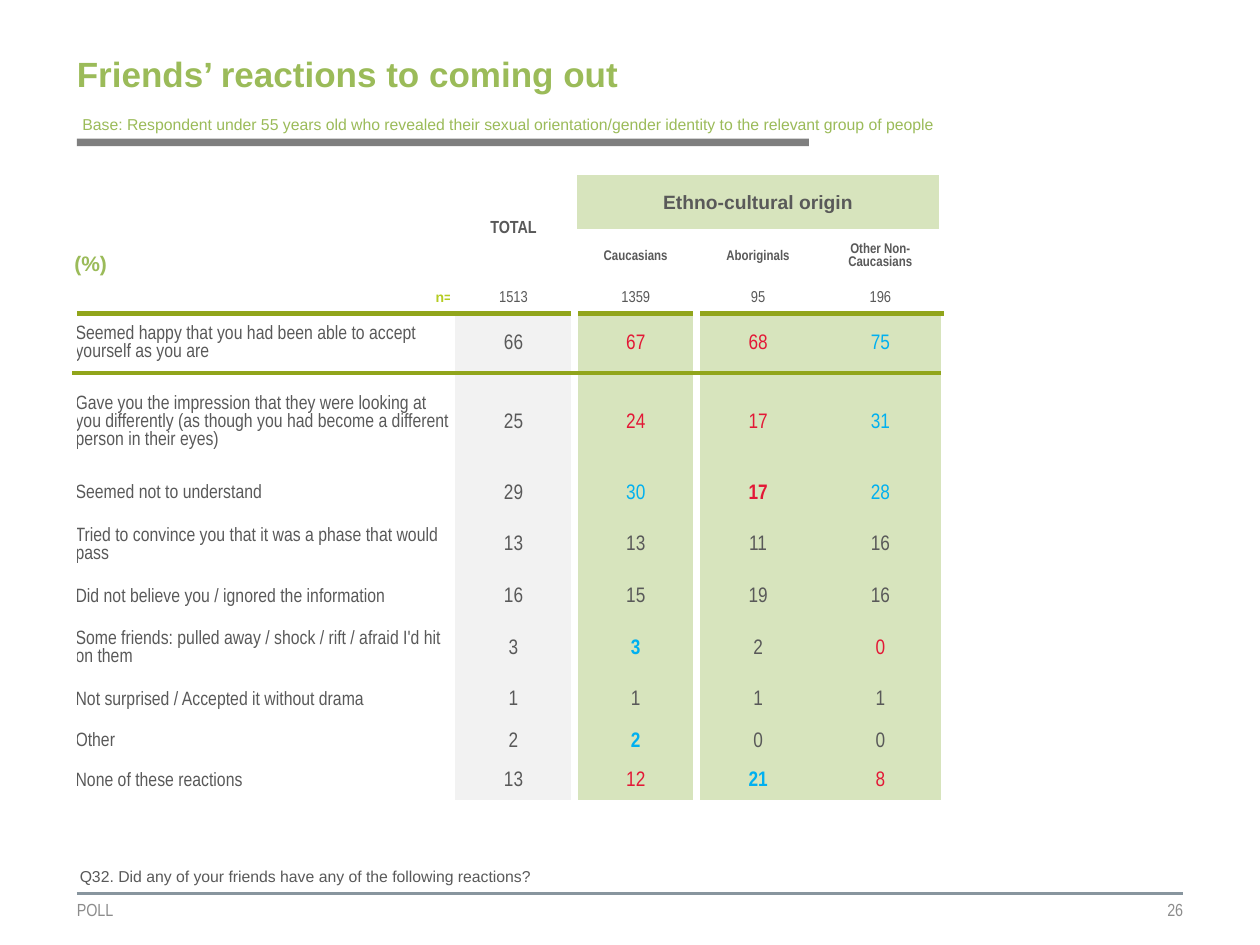
"""Build the slide on friends' reactions to coming out."""
from lxml.etree import SubElement
from pptx import Presentation
from pptx.dml.color import RGBColor
from pptx.enum.shapes import MSO_CONNECTOR, MSO_SHAPE
from pptx.enum.text import MSO_ANCHOR, PP_ALIGN
from pptx.oxml import parse_xml
from pptx.oxml.ns import nsdecls, qn
from pptx.util import Pt

GREEN = RGBColor(0x9B, 0xBB, 0x59)
LIME = RGBColor(0xB5, 0xCC, 0x22)
OLIVE = RGBColor(0x91, 0xA5, 0x1B)
PALE = RGBColor(0xD7, 0xE4, 0xBD)
MIST = RGBColor(0xF2, 0xF2, 0xF2)
WHITE = RGBColor(0xFF, 0xFF, 0xFF)
DARK = RGBColor(0x59, 0x59, 0x59)
GREY = RGBColor(0x8C, 0x8C, 0x8C)
BAR = RGBColor(0x7F, 0x7F, 0x7F)
STEEL = RGBColor(0x88, 0x95, 0x9E)
RED = RGBColor(0xE3, 0x18, 0x36)
BLUE = RGBColor(0x00, 0xB0, 0xF0)

SANS, SLIM = "Arial", "Arial Narrow"
NO_GRID = "{2D5ABB26-0587-4C30-8999-92F81FD0307C}"
LEFT, RIGHT = 43.9, 676.1
TITLE = "Friends’ reactions to coming out"
BASE = ("Base: Respondent under 55 years old who revealed their sexual "
        "orientation/gender identity to the relevant group of people")
ASK = "Q32. Did any of your friends have any of the following reactions?"
GROUPS = ["Caucasians", "Aboriginals", "Other Non-Caucasians"]
COUNTS = [1513, 1359, 95, 196]
TONES = {"-": (DARK, False), "r": (RED, False), "b": (BLUE, False),
         "R": (RED, True), "B": (BLUE, True)}
ROWS = [
    ("Seemed happy that you had been able to accept yourself as you are",
     (66, 67, 68, 75), "-rrb", 33.8),
    ("Gave you the impression that they were looking at you differently "
     "(as though you had become a different person in their eyes)",
     (25, 24, 17, 31), "-rrb", 56.2),
    ("Seemed not to understand", (29, 30, 17, 28), "-bRb", 25.2),
    ("Tried to convince you that it was a phase that would pass",
     (13, 13, 11, 16), "----", 33.8),
    ("Did not believe you / ignored the information",
     (16, 15, 19, 16), "----", 25.2),
    ("Some friends: pulled away / shock / rift / afraid I'd hit on them",
     (3, 3, 2, 0), "-B-r", 33.8),
    ("Not surprised / Accepted it without drama",
     (1, 1, 1, 1), "----", 25.2),
    ("Other", (2, 2, 0, 0), "-B--", 22.4),
    ("None of these reactions", (13, 12, 21, 8), "-rBr", 22.4),
]
HEADS = [31, 30.2, 18]
COLS = [216] + [69.9] * 4


def style(para, size, face, color, bold=False, align=PP_ALIGN.LEFT):
    para.alignment = align
    font = para.font
    font.size, font.name, font.bold = Pt(size), face, bold
    font.color.rgb = color


def put_text(slide, text, box, look, pad=None, wrap=True):
    frame = slide.shapes.add_textbox(*map(Pt, box)).text_frame
    frame.word_wrap = wrap
    if pad is not None:
        frame.margin_left = frame.margin_right = Pt(pad)
        frame.margin_top = frame.margin_bottom = Pt(pad)
        frame.vertical_anchor = MSO_ANCHOR.MIDDLE
    frame.text = text
    style(frame.paragraphs[0], *look)


def put_cell(cell, text, look, pads=(0.7, 0.7, 0.7, 0)):
    (cell.margin_left, cell.margin_top,
     cell.margin_right, cell.margin_bottom) = map(Pt, pads)
    cell.vertical_anchor = MSO_ANCHOR.MIDDLE
    cell.text = str(text)
    style(cell.text_frame.paragraphs[0], *look)


def put_edges(cell, edges):
    props = cell._tc.get_or_add_tcPr()
    for spot, side in enumerate(s for s in "LRTB" if s in edges):
        color, width = edges[side]
        line = parse_xml(f'<a:ln{side} {nsdecls("a")} w="{Pt(width)}"/>')
        solid = SubElement(line, qn("a:solidFill"))
        SubElement(solid, qn("a:srgbClr"), val=str(color))
        props.insert(spot, line)


def find_edges(row, col):
    edges = {}
    if row < 3 or col < 2:
        edges["R"] = (WHITE, 4.5 if row > 2 and col == 1 else 3)
        if col or row > 2:
            edges["L"] = (WHITE, 3)
    elif col == 2:
        edges["L"] = (WHITE, 4.5)
    if row == 2:
        edges["B"] = (OLIVE, 3)
    if row == 3:
        edges["T"] = (OLIVE, 3)
    return edges


def put_table(slide):
    highs = HEADS + [row[3] for row in ROWS]
    frame = slide.shapes.add_table(len(highs), len(COLS), Pt(42.5), Pt(100.1),
                                   Pt(sum(COLS)), Pt(sum(highs)))
    table = frame.table
    table.first_row = table.horz_banding = False
    table._tbl.tblPr.find(qn("a:tableStyleId")).text = NO_GRID
    for col, width in zip(table.columns, COLS):
        col.width = Pt(width)
    for row, high in zip(table.rows, highs):
        row.height = Pt(high)

    mid = PP_ALIGN.CENTER
    table.cell(0, 1).merge(table.cell(1, 1))
    table.cell(0, 2).merge(table.cell(0, 4))
    put_cell(table.cell(0, 1), "TOTAL", (10, SLIM, DARK, True, mid))
    put_cell(table.cell(0, 2), "Ethno-cultural origin",
             (11, SANS, DARK, True, mid))
    unit, size = table.cell(1, 0), table.cell(2, 0)
    put_cell(unit, "(%)", (12, SANS, GREEN, True), (0, 3.6, 0, 3.6))
    unit.vertical_anchor = MSO_ANCHOR.BOTTOM
    put_cell(size, "n=", (8, SANS, LIME, True, PP_ALIGN.RIGHT),
             (0, 3.6, 0, 3.6))
    for cell in (unit, size):
        cell.text_frame.paragraphs[0].line_spacing = 0.95
    for col, name in enumerate(GROUPS, 2):
        put_cell(table.cell(1, col), name, (8, SLIM, DARK, True, mid))
    for col, count in enumerate(COUNTS, 1):
        put_cell(table.cell(2, col), count, (9, SLIM, DARK, False, mid))

    for row, (label, values, tones, _) in enumerate(ROWS, len(HEADS)):
        put_cell(table.cell(row, 0), label, (11, SLIM, DARK))
        for col, (value, tone) in enumerate(zip(values, tones), 1):
            put_cell(table.cell(row, col), value,
                     (12, SLIM, *TONES[tone], mid))

    for row in range(len(highs)):
        for col in range(len(COLS)):
            cell = table.cell(row, col)
            if col > 1 and row not in (1, 2):
                cell.fill.solid()
                cell.fill.fore_color.rgb = PALE
            elif col == 1 and row > 2:
                cell.fill.solid()
                cell.fill.fore_color.rgb = MIST
            else:
                cell.fill.background()
            put_edges(cell, find_edges(row, col))


def put_frame(slide):
    rule = slide.shapes.add_connector(MSO_CONNECTOR.STRAIGHT, Pt(LEFT),
                                      Pt(510.5), Pt(RIGHT), Pt(510.5))
    rule.line.color.rgb, rule.line.width = STEEL, Pt(1.5)
    SubElement(rule._element.spPr, qn("a:effectLst"))
    bar = slide.shapes.add_shape(MSO_SHAPE.RECTANGLE, Pt(LEFT), Pt(79.2),
                                 Pt(418.3), Pt(4.3))
    bar.shadow.inherit = False
    bar.fill.solid()
    bar.fill.fore_color.rgb = BAR
    bar.line.fill.background()
    put_text(slide, "POLL", (LEFT, 510.5, 201.6, 18.7), (10, SLIM, GREY), 0)
    put_text(slide, "26", (RIGHT - 204.5, 510.5, 204.5, 18.7),
             (10, SLIM, GREY, False, PP_ALIGN.RIGHT), 0)


def put_title(slide):
    title = slide.shapes.title
    title.left, title.top, title.width, title.height = map(
        Pt, (LEFT, 25.9, 446.4, 49.7))
    frame = title.text_frame
    frame.margin_left = frame.margin_right = frame.margin_bottom = 0
    frame.margin_top = Pt(4)
    frame.vertical_anchor = MSO_ANCHOR.TOP
    frame.text = TITLE
    style(frame.paragraphs[0], 20, SANS, GREEN, True)


def main():
    deck = Presentation()
    deck.slide_width, deck.slide_height = Pt(720), Pt(540)
    slide = deck.slides.add_slide(deck.slide_layouts[5])
    put_frame(slide)
    put_table(slide)
    put_title(slide)
    put_text(slide, BASE, (40, 61.9, 505.4, 18), (9, SANS, GREEN), wrap=False)
    put_text(slide, ASK, (38.5, 491.8, 649.4, 18), (9, SANS, DARK))
    deck.save("out.pptx")


if __name__ == "__main__":
    main()
